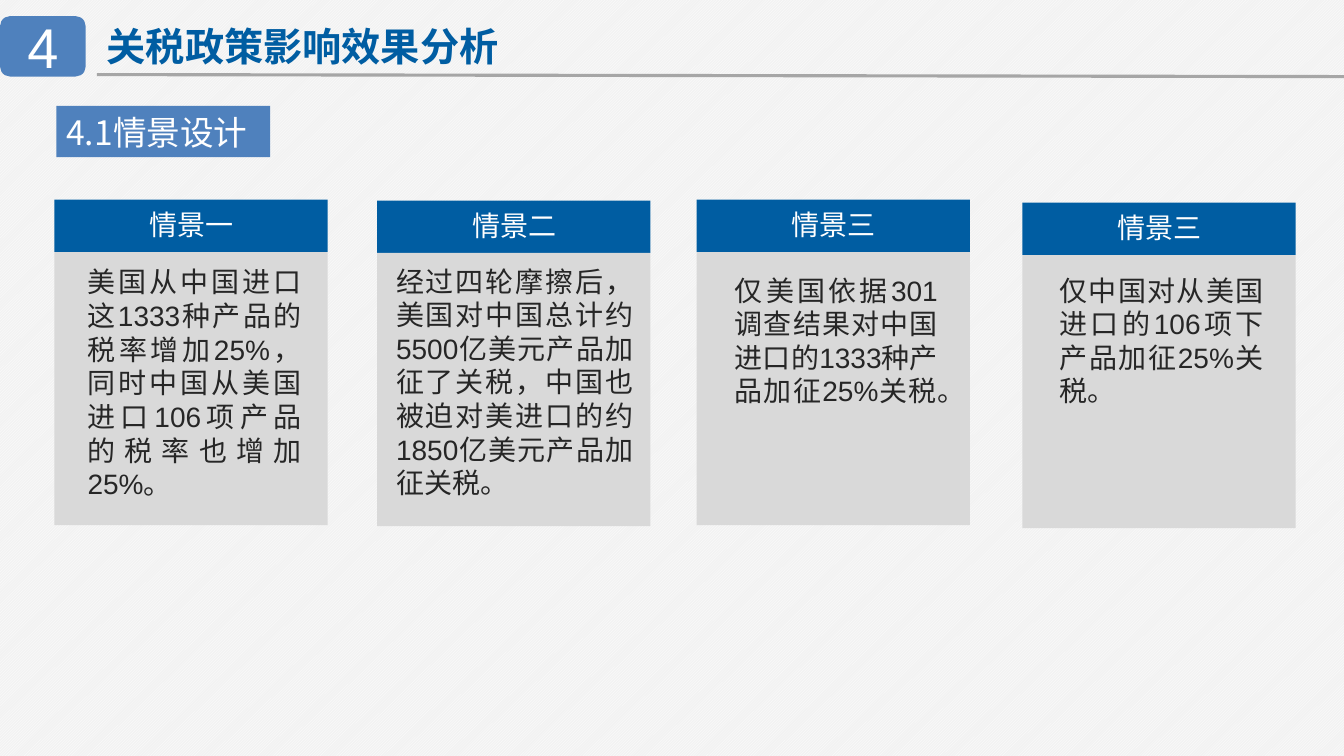
import dataclasses

import pptx
import pptx.dml.color
import pptx.enum.dml
import pptx.enum.shapes
import pptx.enum.text
import pptx.oxml.ns
import pptx.util
from lxml import etree

Inches = pptx.util.Inches
Shape = pptx.enum.shapes.MSO_SHAPE
Align = pptx.enum.text.PP_ALIGN
Anchor = pptx.enum.text.MSO_ANCHOR

SANS = "Noto Sans CJK SC"
COLORS = {
    "white": "FFFFFF",
    "paper": "F2F2F2",
    "navy": "005DA2",
    "blue": "4F81BD",
    "panel": "D9D9D9",
    "rule": "A6A6A6",
    "ink": "262626",
}
CARD_W, HEAD_H, BODY_H = 2.71, 0.52, 2.71


@dataclasses.dataclass(frozen=True)
class Card:
    left: float
    top: float
    head: str
    body: str
    text_box: tuple[float, float, float, float]


CARDS = [
    Card(0.54, 1.98, "情景一",
         "美国从中国进口这1333种产品的税率增加25%，同时中国从美国进口106项产品的税率也增加25%。",
         (0.77, 2.58, 2.32, 2.46)),
    Card(3.74, 1.99, "情景二",
         "经过四轮摩擦后，美国对中国总计约5500亿美元产品加征了关税，中国也被迫对美进口的约1850亿美元产品加征关税。",
         (3.83, 2.57, 2.55, 2.46)),
    Card(6.91, 1.98, "情景三",
         "仅美国依据301调查结果对中国进口的1333种产品加征25%关税。",
         (7.19, 2.66, 2.21, 1.79)),
    Card(10.14, 2.01, "情景三",
         "仅中国对从美国进口的106项下产品加征25%关税。",
         (10.41, 2.66, 2.22, 1.45)),
]


def color(name: str) -> pptx.dml.color.RGBColor:
    return pptx.dml.color.RGBColor.from_string(COLORS[name])


def write(shape, text: str, *, size: int, ink: str = "white", font: str = SANS,
          bold: bool = False, align=Align.LEFT, anchor=Anchor.TOP) -> None:
    frame = shape.text_frame
    frame.word_wrap = True
    frame.auto_size = pptx.enum.text.MSO_AUTO_SIZE.NONE
    frame.vertical_anchor = anchor
    line = frame.paragraphs[0]
    line.alignment = align
    run = line.add_run()
    run.text = text
    run.font.size = pptx.util.Pt(size)
    run.font.bold = bold
    run.font.name = font
    run.font.color.rgb = color(ink)
    east = etree.SubElement(run.font._element, pptx.oxml.ns.qn("a:ea"))
    east.set("typeface", SANS)


def add_block(shapes, kind, fill: str, *box: float):
    block = shapes.add_shape(kind, *map(Inches, box))
    block.shadow.inherit = False
    block.fill.solid()
    block.fill.fore_color.rgb = color(fill)
    block.line.fill.background()
    return block


def add_card(slide, card: Card) -> None:
    group = slide.shapes.add_group_shape()
    add_block(group.shapes, Shape.RECTANGLE, "navy",
              card.left, card.top, CARD_W, HEAD_H)
    add_block(group.shapes, Shape.RECTANGLE, "panel",
              card.left, card.top + HEAD_H, CARD_W, BODY_H)
    head = slide.shapes.add_textbox(
        *map(Inches, (card.left + 0.45, card.top + 0.03, 1.82, 0.44)))
    write(head, card.head, size=20, align=Align.CENTER)
    body = slide.shapes.add_textbox(*map(Inches, card.text_box))
    write(body, card.body, size=20, ink="ink", font="Arial", align=Align.JUSTIFY)


def add_rule(slide) -> None:
    rule = slide.shapes.add_connector(
        pptx.enum.shapes.MSO_CONNECTOR.STRAIGHT,
        *map(Inches, (0.96, 0.74, 13.33, 0.76)))
    rule.line.color.rgb = color("rule")
    rule.line.width = pptx.util.Pt(2.25)
    etree.SubElement(rule._element.spPr, pptx.oxml.ns.qn("a:effectLst"))


def main() -> None:
    deck = pptx.Presentation()
    deck.slide_width, deck.slide_height = Inches(13.33), Inches(7.5)
    slide = deck.slides.add_slide(deck.slide_layouts[5])

    back = slide.background.fill
    back.patterned()
    back.pattern = pptx.enum.dml.MSO_PATTERN.LIGHT_UPWARD_DIAGONAL
    back.fore_color.rgb = color("white")
    back.back_color.rgb = color("paper")

    title = slide.shapes.title
    title.left, title.top, title.width, title.height = map(
        Inches, (0.96, 0.17, 4.16, 0.57))
    write(title, "关税政策影响效果分析", size=28, ink="navy", bold=True)
    add_rule(slide)

    badge = add_block(slide.shapes, Shape.ROUNDED_RECTANGLE, "blue",
                      0, 0.16, 0.85, 0.6)
    write(badge, "4", size=40, font="Arial",
          align=Align.CENTER, anchor=Anchor.MIDDLE)
    topic = add_block(slide.shapes, Shape.RECTANGLE, "blue",
                      0.56, 1.05, 2.12, 0.51)
    write(topic, "4.1情景设计", size=24, anchor=Anchor.MIDDLE)

    for card in CARDS:
        add_card(slide, card)
    deck.save("out.pptx")


if __name__ == "__main__":
    main()
